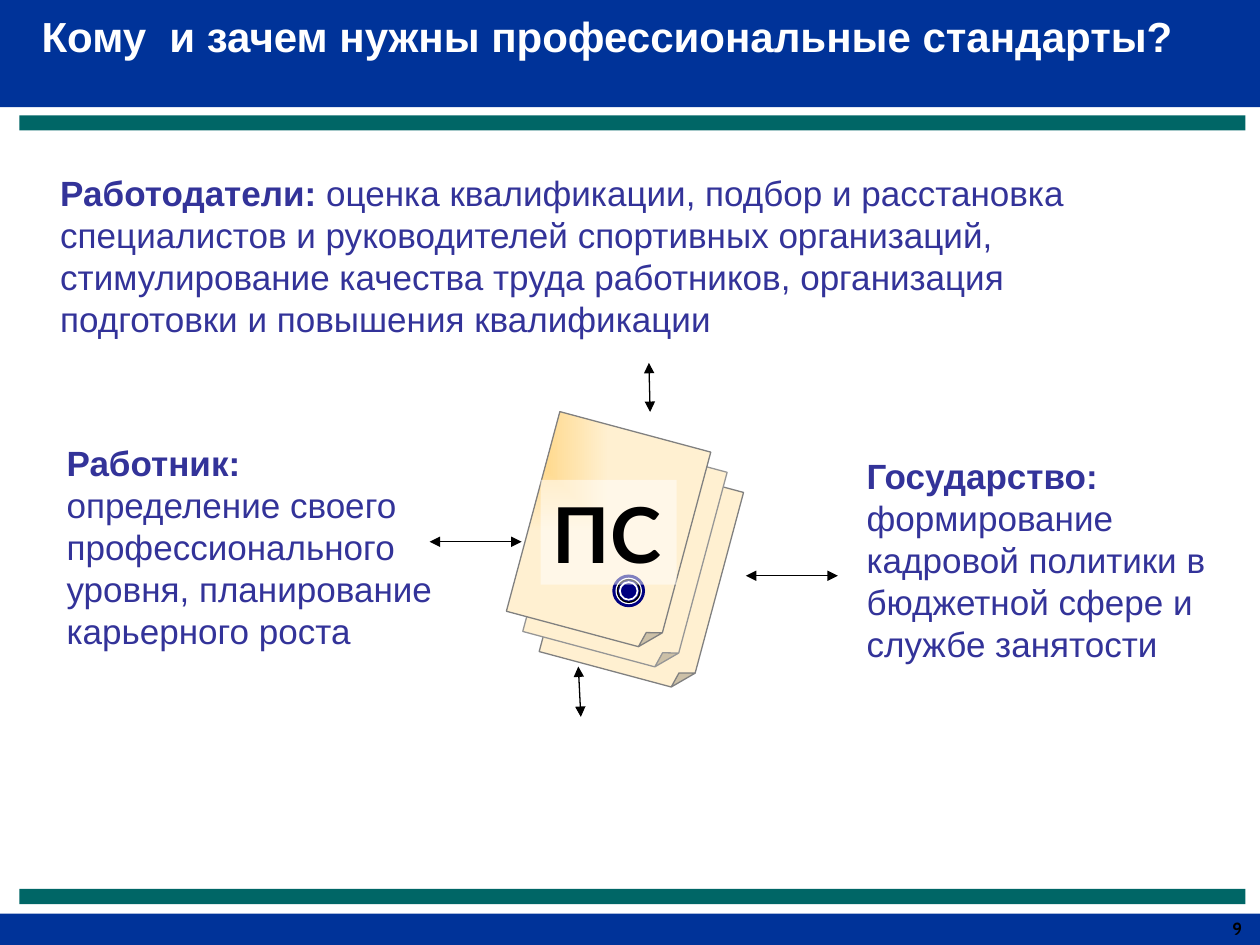
from dataclasses import dataclass

from lxml import etree
from pptx import Presentation
from pptx.dml.color import RGBColor
from pptx.enum.shapes import MSO_CONNECTOR, MSO_SHAPE
from pptx.enum.text import MSO_ANCHOR, MSO_AUTO_SIZE, PP_ALIGN
from pptx.oxml.ns import qn
from pptx.slide import Slide
from pptx.util import Inches, Pt

RECTANGLE, OVAL, FOLDED = MSO_SHAPE.RECTANGLE, MSO_SHAPE.OVAL, MSO_SHAPE.FOLDED_CORNER
STRAIGHT = MSO_CONNECTOR.STRAIGHT
TOP, MIDDLE = MSO_ANCHOR.TOP, MSO_ANCHOR.MIDDLE
LEFT, RIGHT = PP_ALIGN.LEFT, PP_ALIGN.RIGHT
NO_FIT = MSO_AUTO_SIZE.NONE

BLUE = RGBColor(0x00, 0x33, 0x99)
TEAL = RGBColor(0x00, 0x66, 0x66)
INDIGO = RGBColor(0x33, 0x33, 0x99)
NAVY = RGBColor(0x00, 0x00, 0x80)
WHITE = RGBColor(0xFF, 0xFF, 0xFF)
BLACK = RGBColor(0x00, 0x00, 0x00)
GREY = RGBColor(0x80, 0x80, 0x80)
LIGHT_GREY = RGBColor(0x96, 0x96, 0x96)
AMBER = RGBColor(0xFF, 0xCC, 0x66)
CREAM = RGBColor(0xFF, 0xF0, 0xD1)

WIDTH, HEIGHT = Inches(10), Inches(7.5)
COLUMNS, ROWS = 100, 75


def write_text(frame, paragraphs, font="Arial", size=20, color=INDIGO, align=LEFT,
               anchor=MIDDLE, wrap=True, line_spacing=None, right_inset=0.1):
    """Fill a text frame with paragraphs, each a list of (text, bold) pairs."""
    frame.word_wrap, frame.auto_size, frame.vertical_anchor = wrap, NO_FIT, anchor
    frame.margin_left, frame.margin_right = Inches(0.1), Inches(right_inset)
    frame.margin_top = frame.margin_bottom = Inches(0.05)
    for index, runs in enumerate(paragraphs):
        paragraph = frame.add_paragraph() if index else frame.paragraphs[0]
        paragraph.alignment, paragraph.line_spacing = align, line_spacing
        for text, bold in runs:
            run = paragraph.add_run()
            run.text = text
            run.font.name, run.font.size, run.font.bold = font, Pt(size), bold
            run.font.color.rgb = color


@dataclass
class StandardsSlide:
    """Draws styled elements on one slide in units of a 100 by 75 grid."""

    slide: Slide
    arrow_color: RGBColor = BLACK
    line_width: float = 0.75

    def place(self, *lengths):
        """Turn alternating columns and rows into slide lengths."""
        units = (WIDTH / COLUMNS, HEIGHT / ROWS)
        return [round(length * units[index % 2]) for index, length in enumerate(lengths)]

    def shape(self, kind, box, fill=None, line=None, line_width=None):
        """Add a preset shape with a plain fill and an optional outline."""
        shape = self.slide.shapes.add_shape(kind, *self.place(*box))
        shape.shadow.inherit = False
        if fill is not None:
            shape.fill.solid()
            shape.fill.fore_color.rgb = fill
        if line is None:
            shape.line.fill.background()
        else:
            shape.line.color.rgb = line
            shape.line.width = Pt(line_width or self.line_width)
        return shape

    def sheet(self, column, row, line):
        """Add a tilted sheet of paper shaded from its top left corner."""
        sheet = self.shape(FOLDED, (column, row, 12.4, 16.4), line=line)
        sheet.rotation = 15
        fold = sheet.element.spPr.find(qn("a:prstGeom")).find(qn("a:avLst"))
        etree.SubElement(fold, qn("a:gd"), {"name": "adj", "fmla": "val 12500"})
        sheet.fill.gradient()
        for stop, color in zip(sheet.fill.gradient_stops, (AMBER, CREAM)):
            stop.color.rgb = color
        gradient = sheet.element.spPr.find(qn("a:gradFill"))
        gradient.remove(gradient.find(qn("a:lin")))
        shade = etree.SubElement(gradient, qn("a:path"), {"path": "rect"})
        etree.SubElement(shade, qn("a:fillToRect"), {"r": "100000", "b": "100000"})

    def disc(self, diameter, fill, line=None, line_width=None):
        """Add one ring of the seal around its fixed centre."""
        box = (49.9 - diameter / 2, 46.9 - diameter / 2, diameter, diameter)
        self.shape(OVAL, box, fill, line, line_width)

    def label(self, box, text):
        """Add a half-transparent white label with large text."""
        label = self.shape(RECTANGLE, box, WHITE)
        color = label.element.spPr.find(qn("a:solidFill"))[0]
        etree.SubElement(color, qn("a:alpha"), {"val": "50000"})
        write_text(label.text_frame, [[(text, True)]], font="Lato", size=44,
                   color=BLACK, wrap=False)

    def text(self, box, paragraphs, **text_format):
        """Add a text box."""
        text_box = self.slide.shapes.add_textbox(*self.place(*box))
        write_text(text_box.text_frame, paragraphs, **text_format)

    def arrow(self, *ends):
        """Add a line with an arrowhead at both ends."""
        arrow = self.slide.shapes.add_connector(STRAIGHT, *self.place(*ends))
        arrow.line.color.rgb = self.arrow_color
        arrow.line.width = Pt(self.line_width)
        outline = arrow.element.spPr.find(qn("a:ln"))
        for end in ("a:headEnd", "a:tailEnd"):
            etree.SubElement(outline, qn(end), {"type": "triangle"})
        etree.SubElement(arrow.element.spPr, qn("a:effectLst"))

    def title(self, box, text):
        """Format the title placeholder and bring it to the front."""
        title = self.slide.shapes.title
        title.left, title.top, title.width, title.height = self.place(*box)
        write_text(title.text_frame, [[(text, True)]], size=24, color=WHITE,
                   anchor=TOP, line_spacing=0.9)
        self.slide.shapes.element.append(title.element)


def main():
    """Build the slide and save it."""
    presentation = Presentation()
    presentation.slide_width, presentation.slide_height = WIDTH, HEIGHT
    page = StandardsSlide(presentation.slides.add_slide(presentation.slide_layouts[5]))

    for row, height in ((72.5, 2.5), (0, 8.5)):
        page.shape(RECTANGLE, (0, row, 100, height), BLUE)
    for row in (9.15, 70.55):
        page.shape(RECTANGLE, (1.55, row, 97.3, 1.2), TEAL)

    for step, line in ((2, GREY), (1, LIGHT_GREY), (0, GREY)):
        page.sheet(42.1 + 1.3 * step, 34 + 1.6 * step, line)
    page.disc(2.6, NAVY)
    page.disc(2, WHITE, WHITE)
    page.disc(1.8, NAVY, BLACK)
    page.disc(1.4, NAVY, WHITE, 1)
    page.label((42.9, 38.1, 10.8, 8.3), "ПС")

    page.text((95, 72.4, 5, 2.7), [[("9", True)]], font="Cabin", size=10,
              color=BLACK, align=RIGHT, anchor=TOP, right_inset=0.14)
    page.text((3.8, 13, 90.7, 14.5), [[
        ("Работодатели:", True),
        (" оценка квалификации, подбор и расстановка специалистов и руководителей "
         "спортивных организаций, стимулирование качества труда работников, "
         "организация подготовки и повышения квалификации", False)]])
    page.text((67.8, 35.5, 30.3, 17.8), [[
        ("Государство: ", True),
        ("формирование кадровой политики в бюджетной сфере и службе занятости", False)]])
    page.text((4.3, 34.5, 34.2, 17.8), [
        [("Работник:", True)],
        [("определение своего профессионального уровня, планирование карьерного роста",
          False)]])

    for ends in ((59.2, 45.7, 66.5, 45.7), (45.9, 52.9, 46.1, 56.9),
                 (34.1, 43, 41.4, 43), (51.5, 28.8, 51.6, 32.7)):
        page.arrow(*ends)
    page.title((2.3, 0.8, 107.5, 4.6), "Кому  и зачем нужны профессиональные стандарты?")
    presentation.save("out.pptx")


if __name__ == "__main__":
    main()
